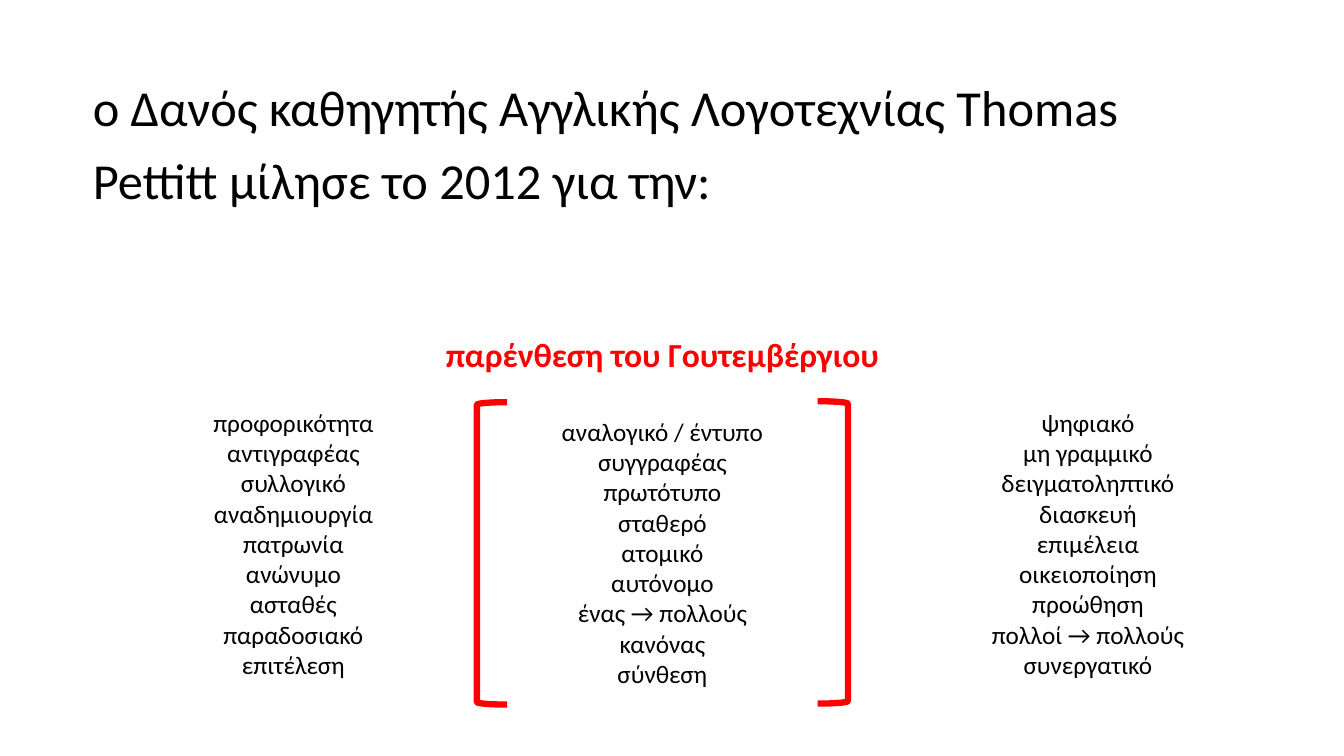
from dataclasses import dataclass

import pptx
import pptx.dml.color
import pptx.enum.shapes
import pptx.enum.text
import pptx.oxml.ns
import pptx.util
from lxml import etree

Inches = pptx.util.Inches
Pt = pptx.util.Pt
RGBColor = pptx.dml.color.RGBColor
CENTER = pptx.enum.text.PP_ALIGN.CENTER
LEFT = pptx.enum.text.PP_ALIGN.LEFT


@dataclass(frozen=True)
class Theme:
    font: str = "Calibri"
    ink: RGBColor = RGBColor(0, 0, 0)
    accent: RGBColor = RGBColor(255, 0, 0)
    intro_size: int = 36
    heading_size: int = 24
    column_size: int = 18
    bracket_width: float = 4.5


THEME = Theme()

INTRO = "ο Δανός καθηγητής Αγγλικής Λογοτεχνίας Thomas Pettitt μίλησε το 2012 για την:"
HEADING = "παρένθεση του Γουτεμβέργιου"
BEFORE = ["προφορικότητα", "αντιγραφέας", "συλλογικό", "αναδημιουργία", "πατρωνία",
          "ανώνυμο", "ασταθές", "παραδοσιακό", "επιτέλεση"]
DURING = ["αναλογικό / έντυπο", "συγγραφέας", "πρωτότυπο", "σταθερό", "ατομικό",
          "αυτόνομο", "ένας → πολλούς", "κανόνας", "σύνθεση"]
AFTER = ["ψηφιακό", "μη γραμμικό", "δειγματοληπτικό", "διασκευή", "επιμέλεια",
         "οικειοποίηση", "προώθηση", "πολλοί → πολλούς", "συνεργατικό"]


def write_lines(frame, lines, size, color, align=CENTER, bold=False):
    frame.word_wrap = True
    frame.text = "\n".join(lines)
    for para in frame.paragraphs:
        para.alignment = align
        for span in para.runs:
            span.font.name = THEME.font
            span.font.size = Pt(size)
            span.font.bold = bold
            span.font.color.rgb = color


def fill_intro(body, left, top, width, height):
    """Move the body placeholder and set the opening sentence without a bullet."""
    body.left, body.top = Inches(left), Inches(top)
    body.width, body.height = Inches(width), Inches(height)
    frame = body.text_frame
    write_lines(frame, [INTRO], THEME.intro_size, THEME.ink, LEFT)
    frame.auto_size = pptx.enum.text.MSO_AUTO_SIZE.NONE
    para = frame.paragraphs[0]
    para.line_spacing = 1.2
    para.space_before = para.space_after = Pt(6)
    properties = para._p.get_or_add_pPr()
    properties.set("marL", "0")
    properties.set("indent", "0")
    etree.SubElement(properties, pptx.oxml.ns.qn("a:buNone"))


def add_text(page, lines, left, top, width, height, size, color, bold=False):
    box = page.shapes.add_textbox(Inches(left), Inches(top), Inches(width), Inches(height))
    write_lines(box.text_frame, lines, size, color, bold=bold)
    box.text_frame.auto_size = pptx.enum.text.MSO_AUTO_SIZE.SHAPE_TO_FIT_TEXT


def add_bracket(page, left, top, width, height, rotation):
    bracket = page.shapes.add_shape(pptx.enum.shapes.MSO_SHAPE.LEFT_BRACKET,
                                    Inches(left), Inches(top), Inches(width), Inches(height))
    bracket.rotation = rotation
    bracket.shadow.inherit = False
    bracket.fill.background()
    bracket.line.color.rgb = THEME.accent
    bracket.line.width = Pt(THEME.bracket_width)


def add_comparison(page, left, top, width):
    """Place the heading above three columns, the middle one in brackets."""
    add_text(page, [HEADING], left, top, width, 0.5,
             THEME.heading_size, THEME.accent, bold=True)
    for lines, across, down in ((BEFORE, 0.02, 0.73), (DURING, 3.68, 0.82), (AFTER, 7.9, 0.73)):
        add_text(page, lines, left + across, top + down, 2.52, 2.83,
                 THEME.column_size, THEME.ink)
    for across, down, rotation in ((3.1, 0.73, 0), (6.48, 0.72, 180)):
        add_bracket(page, left + across, top + down, 0.3, 3, rotation)


def main():
    deck = pptx.Presentation()
    deck.slide_width, deck.slide_height = Inches(13.33), Inches(7.5)
    page = deck.slides.add_slide(deck.slide_layouts[1])
    title = page.shapes.title
    title._element.getparent().remove(title._element)
    fill_intro(page.placeholders[1], 0.82, 0.59, 11.5, 1.45)
    add_comparison(page, 1.63, 3.26, 9.88)
    deck.save("out.pptx")


if __name__ == "__main__":
    main()
